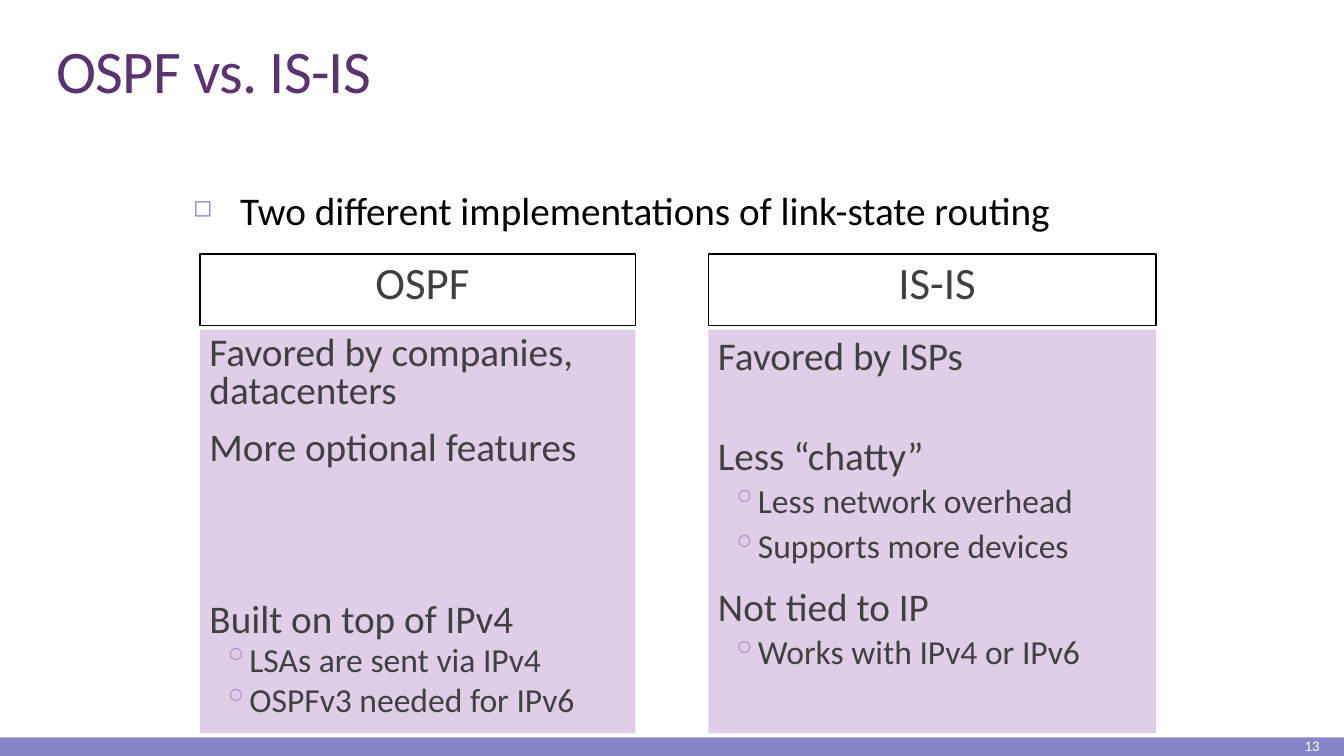
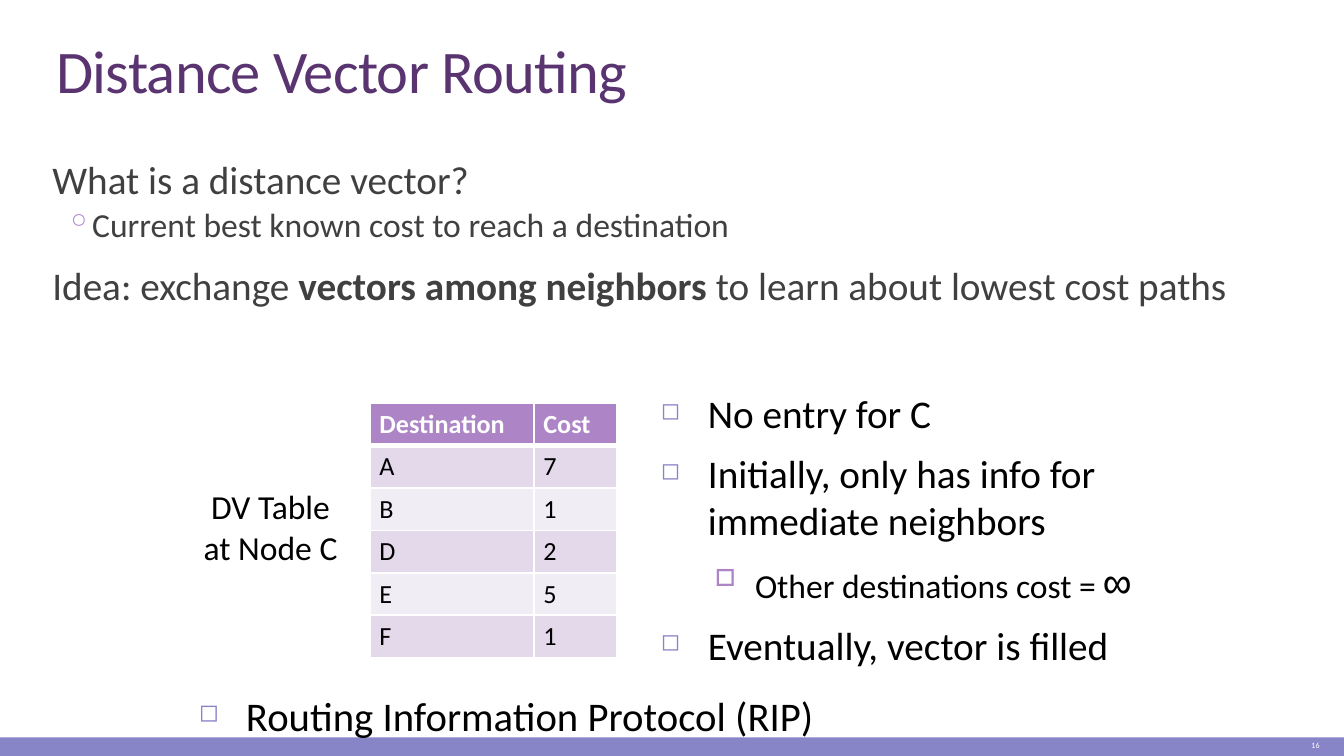
from dataclasses import dataclass
from itertools import product

from lxml.etree import SubElement
from pptx import Presentation
from pptx.dml.color import RGBColor
from pptx.enum.shapes import MSO_SHAPE
from pptx.enum.text import MSO_ANCHOR, MSO_AUTO_SIZE, PP_ALIGN
from pptx.oxml.ns import qn
from pptx.util import Cm, Pt


@dataclass(frozen=True)
class Theme:
    font: str = "Calibri"
    symbol_font: str = "Courier New"
    title: str = "5A3471"
    band: str = "8784C7"
    accent: str = "AD84C6"
    panel: str = "DECEE8"
    row_dark: str = "E3D9EA"
    row_light: str = "F1EDF5"
    body: str = "404040"
    black: str = "000000"
    white: str = "FFFFFF"
    title_size: float = 32.4
    heading_size: float = 24
    point_size: float = 21
    detail_size: float = 18
    cell_size: float = 14


THEME = Theme()

POINT = dict(size=THEME.point_size, color=THEME.body, left=0.18,
             before=9, after=1.5, spacing=0.9)
DETAIL = dict(size=THEME.detail_size, color=THEME.body, level=1, left=0.81,
              hanging=0.38, before=1.5, after=3, spacing=0.9, bullet="◦",
              bullet_color=THEME.accent)
HEADING = dict(POINT, size=THEME.heading_size, align=PP_ALIGN.CENTER)
SQUARE = dict(size=THEME.point_size, left=0.89, hanging=0.89, before=7,
              bullet="◻", bullet_color=THEME.band, bullet_scale=60)
SUB_SQUARE = dict(size=THEME.detail_size, level=1, left=1.78, hanging=0.76,
                  before=5.5, bullet="□", bullet_color=THEME.accent,
                  bullet_scale=70)
LABEL = dict(size=THEME.detail_size, align=PP_ALIGN.CENTER)
TIGHT = dict(spacing=0.8)

SLIDE_SIZE = (25.4, 14.29)
TITLE_AREA = (0.81, 0.61, 24.08, 1.52)
BAND_AREA = (0, 13.94, 25.4, 0.35)
NUMBER_AREA = (22.45, 13.87, 2.74, 0.43)
BODY_MARGINS = (0, 0.13, 0, 0.13)

COMPARISON = dict(title="OSPF vs. IS-IS", number="13", number_size=7.9)
COMPARISON_INTRO = [("Two different implementations of link-state routing", SQUARE)]
HEADING_ROW = (4.8, 1.35)
PANEL_ROW = (6.23, 7.63)
PROTOCOLS = [
    dict(name="OSPF", left=3.78, width=8.23, points=[
        ("Favored by companies, datacenters", POINT | TIGHT),
        ("More optional features", POINT | TIGHT),
        ("Built on top of IPv4", POINT | TIGHT | dict(before=70.5)),
        ("LSAs are sent via IPv4", DETAIL | TIGHT),
        ("OSPFv3 needed for IPv6", DETAIL | TIGHT),
    ]),
    dict(name="IS-IS", left=13.39, width=8.46, points=[
        ("Favored by ISPs", POINT),
        ("Less “chatty”", POINT | dict(before=29.5)),
        ("Less network overhead", DETAIL),
        ("Supports more devices", DETAIL),
        ("Not tied to IP", POINT),
        ("Works with IPv4 or IPv6", DETAIL),
    ]),
]

VECTORS = dict(title="Distance Vector Routing", number="16", number_size=4.3)
VECTOR_IDEA = [
    ("What is a distance vector?", POINT),
    ("Current best known cost to reach a destination", DETAIL),
    ([("Idea: exchange ", {}), ("vectors among neighbors ", dict(bold=True)),
      ("to learn about lowest cost paths", {})], POINT),
]
VECTOR_NOTES = [
    ("No entry for C", SQUARE),
    ("Initially, only has info for immediate neighbors", SQUARE),
    ([("Other destinations cost = ", {}),
      ("∞", dict(size=THEME.heading_size, font=THEME.symbol_font))], SUB_SQUARE),
    ("Eventually, vector is filled", SQUARE),
]
VECTOR_PROTOCOL = [("Routing Information Protocol (RIP)", SQUARE | dict(size=21.8))]
TABLE_LABEL = [("DV Table", LABEL), ("at Node C", LABEL)]
COSTS = [("Destination", "Cost"), ("A", "7"), ("B", "1"),
         ("D", "2"), ("E", "5"), ("F", "1")]
COST_COLUMNS = (3.1, 1.57)
COST_ROW = 0.78


def rgb(code):
    return RGBColor.from_string(code)


def lengths(values):
    return [Cm(value) for value in values]


def add_bullet(para, character, color, scale):
    properties = para._p.get_or_add_pPr()
    SubElement(SubElement(properties, qn("a:buClr")), qn("a:srgbClr"), val=color)
    SubElement(properties, qn("a:buSzPct"), val=str(scale * 1000))
    SubElement(properties, qn("a:buChar"), char=character)


def write(para, text, *, size, color=THEME.black, font=THEME.font, bold=False,
          align=PP_ALIGN.LEFT, level=0, left=0, hanging=0, before=0, after=0,
          spacing=1.0, tracking=None, bullet=None, bullet_color=None,
          bullet_scale=100):
    para.alignment, para.level = align, level
    para.space_before, para.space_after = Pt(before), Pt(after)
    para.line_spacing = spacing
    properties = para._p.get_or_add_pPr()
    properties.set("marL", str(Cm(left)))
    properties.set("indent", str(-Cm(hanging)))
    if bullet:
        add_bullet(para, bullet, bullet_color, bullet_scale)
    for words, changes in [(text, {})] if isinstance(text, str) else text:
        span = para.add_run()
        span.text = words
        span.font.name = changes.get("font", font)
        span.font.size = Pt(changes.get("size", size))
        span.font.bold = changes.get("bold", bold)
        span.font.color.rgb = rgb(color)
        if tracking is not None:
            span._r.get_or_add_rPr().set("spc", str(tracking))


def fill_frame(frame, lines, margins=None, anchor=MSO_ANCHOR.TOP, wrap=True):
    frame.word_wrap = wrap
    frame.auto_size = MSO_AUTO_SIZE.NONE
    frame.vertical_anchor = anchor
    if margins:
        (frame.margin_left, frame.margin_top,
         frame.margin_right, frame.margin_bottom) = lengths(margins)
    for index, (text, style) in enumerate(lines):
        para = frame.add_paragraph() if index else frame.paragraphs[0]
        write(para, text, **style)


def add_text(page, area, lines, **layout):
    box = page.shapes.add_textbox(*lengths(area))
    fill_frame(box.text_frame, lines, **layout)


def add_panel(page, area, lines=(), fill=None, line=None):
    box = page.shapes.add_shape(MSO_SHAPE.RECTANGLE, *lengths(area))
    box.shadow.inherit = False
    if fill:
        box.fill.solid()
        box.fill.fore_color.rgb = rgb(fill)
    else:
        box.fill.background()
    if line:
        box.line.color.rgb = rgb(line)
        box.line.width = Pt(0.75)
    else:
        box.line.fill.background()
    if lines:
        fill_frame(box.text_frame, lines, margins=BODY_MARGINS)


def add_page(deck, title, number, number_size):
    page = deck.slides.add_slide(deck.slide_layouts.get_by_name("Title Only"))
    heading = page.shapes.title
    heading.left, heading.top, heading.width, heading.height = lengths(TITLE_AREA)
    title_style = dict(size=THEME.title_size, color=THEME.title,
                       spacing=0.85, tracking=-40)
    fill_frame(heading.text_frame, [(title, title_style)], anchor=MSO_ANCHOR.BOTTOM)
    add_panel(page, BAND_AREA, fill=THEME.band)
    number_style = dict(size=number_size, color=THEME.white, align=PP_ALIGN.RIGHT)
    add_text(page, NUMBER_AREA, [(number, number_style)], anchor=MSO_ANCHOR.MIDDLE)
    return page


def add_borders(cell, row):
    properties = cell._tc.get_or_add_tcPr()
    for side in "LRTB":
        thick = (row, side) in {(0, "B"), (1, "T")}
        edge = SubElement(properties, qn(f"a:ln{side}"), w=str(Pt(3 if thick else 1)))
        solid = SubElement(edge, qn("a:solidFill"))
        SubElement(solid, qn("a:srgbClr"), val=THEME.white)


def add_cost_table(page, left, top):
    area = (left, top, sum(COST_COLUMNS), COST_ROW * len(COSTS))
    table = page.shapes.add_table(len(COSTS), len(COST_COLUMNS), *lengths(area)).table
    for column, width in zip(table.columns, COST_COLUMNS):
        column.width = Cm(width)
    for row, column in product(range(len(COSTS)), range(len(COST_COLUMNS))):
        cell = table.cell(row, column)
        header = row == 0
        add_borders(cell, row)
        cell.fill.solid()
        stripe = THEME.row_dark if row % 2 else THEME.row_light
        cell.fill.fore_color.rgb = rgb(THEME.accent if header else stripe)
        cell.margin_left = cell.margin_right = Cm(0.18)
        cell.margin_top = cell.margin_bottom = Cm(0.1)
        write(cell.text_frame.paragraphs[0], COSTS[row][column],
              size=THEME.cell_size, bold=header,
              color=THEME.white if header else THEME.black)


def build_comparison(deck):
    page = add_page(deck, **COMPARISON)
    for protocol in PROTOCOLS:
        left, width = protocol["left"], protocol["width"]
        for (top, height), lines, look in (
            (PANEL_ROW, protocol["points"], dict(fill=THEME.panel)),
            (HEADING_ROW, [(protocol["name"], HEADING)], dict(line=THEME.black)),
        ):
            add_panel(page, (left, top, width, height), lines, **look)
    add_text(page, (3.4, 3.4, 18.54, 1.52), COMPARISON_INTRO)


def build_vectors(deck):
    page = add_page(deck, **VECTORS)
    add_text(page, (0.81, 2.9, 24.08, 9.98), VECTOR_IDEA, margins=BODY_MARGINS)
    add_text(page, (3.51, 12.93, 18.42, 1.32), VECTOR_PROTOCOL)
    add_cost_table(page, 6.99, 7.62)
    add_text(page, (3.58, 9.07, 3.07, 1.8), TABLE_LABEL, wrap=False)
    add_text(page, (12.24, 7.24, 9.53, 5.44), VECTOR_NOTES)


def main():
    deck = Presentation()
    deck.slide_width, deck.slide_height = lengths(SLIDE_SIZE)
    build_comparison(deck)
    build_vectors(deck)
    deck.save("out.pptx")


if __name__ == "__main__":
    main()
